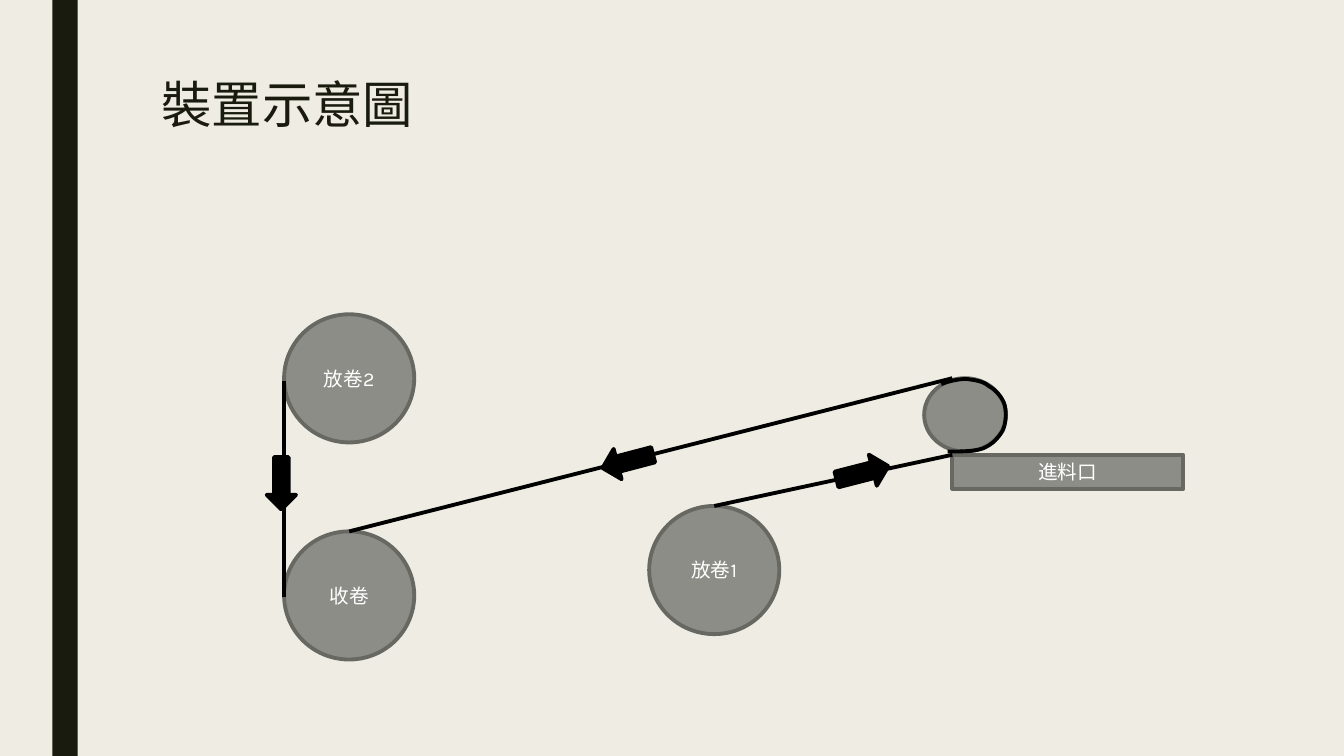
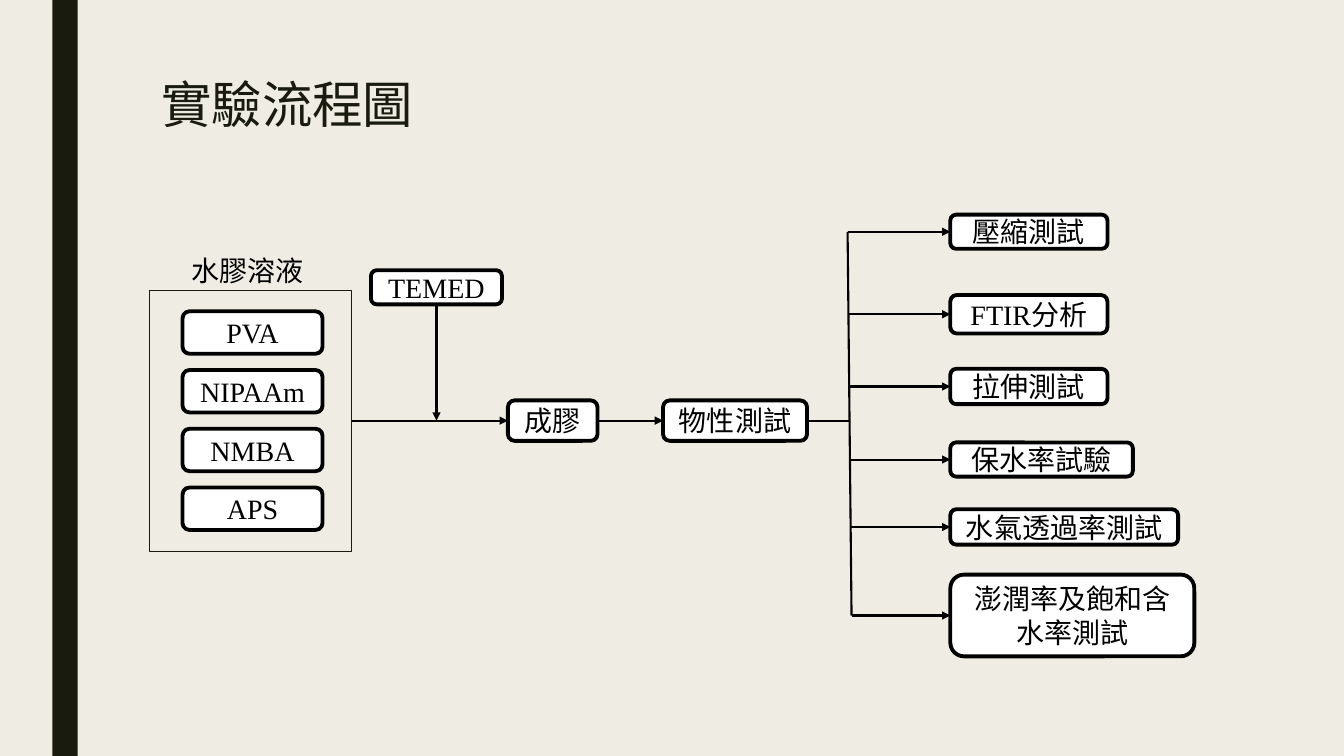
import lxml.etree
import pptx
import pptx.dml.color
import pptx.enum.shapes
import pptx.enum.text
import pptx.oxml.ns
import pptx.util

Cm = pptx.util.Cm
Pt = pptx.util.Pt
RGBColor = pptx.dml.color.RGBColor
PRESET = pptx.enum.shapes.MSO_SHAPE
ALIGN = pptx.enum.text.PP_ALIGN
ANCHOR = pptx.enum.text.MSO_ANCHOR
qn = pptx.oxml.ns.qn

CREAM = RGBColor(0xEF, 0xED, 0xE3)
DARK = RGBColor(0x19, 0x1B, 0x0E)
GREY = RGBColor(0x8C, 0x8D, 0x86)
GREY_EDGE = RGBColor(0x68, 0x68, 0x63)
BLACK = RGBColor(0, 0, 0)
WHITE = RGBColor(0xFF, 0xFF, 0xFF)

CJK = "Noto Sans CJK TC"
SERIF = "Times New Roman"
SANS = "Arial"
LABEL = "Karla"
HEAVY = 2.75
FINE = 1.5


class Deck:
    def __init__(self):
        self.prs = pptx.Presentation()
        self.prs.slide_width = Cm(33.87)
        self.prs.slide_height = Cm(19.05)
        self.layout = self.prs.slide_layouts[5]
        self.slide = None
        fill = self.prs.slide_master.background.fill
        fill.solid()
        fill.fore_color.rgb = CREAM
        heading = self.layout.placeholders[0]
        heading.left, heading.top = Cm(3.81), Cm(1.9)
        heading.width, heading.height = Cm(26.67), Cm(4.11)

    def new_slide(self, title, font):
        first = self.slide is None
        self.slide = self.prs.slides.add_slide(self.layout)
        if first:
            band = self.shape(PRESET.RECTANGLE, 1.32, 0, 0.64, 19.05, DARK)
            self.prs.slide_master.element.cSld.spTree.insert(2, band.element)
        heading = self.slide.shapes.title
        heading.text_frame.auto_size = pptx.enum.text.MSO_AUTO_SIZE.NONE
        self.add_text(heading, title, 36, font, DARK, ALIGN.LEFT, ANCHOR.TOP)
        heading.text_frame.paragraphs[0].line_spacing = 0.89

    def add_text(self, holder, text, size, font, color, align=ALIGN.CENTER, anchor=ANCHOR.MIDDLE):
        frame = holder.text_frame
        frame.word_wrap = True
        frame.vertical_anchor = anchor
        paragraph = frame.paragraphs[0]
        paragraph.alignment = align
        run = paragraph.add_run()
        run.text = text
        run.font.size = Pt(size)
        run.font.color.rgb = color
        run.font.name = font
        for properties in holder.element.iter(qn("a:rPr")):
            lxml.etree.SubElement(properties, qn("a:ea"), typeface=CJK)

    def paint(self, shape, fill, edge, weight):
        shape.shadow.inherit = False
        if fill is None:
            shape.fill.background()
        else:
            shape.fill.solid()
            shape.fill.fore_color.rgb = fill
        if edge is None:
            shape.line.fill.background()
        else:
            shape.line.color.rgb = edge
            shape.line.width = Pt(weight)

    def shape(self, preset, left, top, width, height, fill=None, edge=None, weight=HEAVY):
        shape = self.slide.shapes.add_shape(preset, Cm(left), Cm(top), Cm(width), Cm(height))
        self.paint(shape, fill, edge, weight)
        return shape

    def machine_part(self, preset, left, top, width, height, text=None):
        part = self.shape(preset, left, top, width, height, GREY, GREY_EDGE)
        if text:
            self.add_text(part, text, 14, LABEL, WHITE)

    def direction(self, left, top, width, height, angle):
        arrow = self.shape(PRESET.RIGHT_ARROW, left, top, width, height, BLACK, BLACK)
        arrow.rotation = angle

    def step(self, text, left, middle, width, height, font=CJK):
        step = self.shape(PRESET.ROUNDED_RECTANGLE, left, middle - height / 2, width, height, WHITE, BLACK)
        step.adjustments[0] = 0.167
        self.add_text(step, text, 20, font, BLACK)
        return step

    def caption(self, text, left, top, width, height):
        caption = self.slide.shapes.add_textbox(Cm(left), Cm(top), Cm(width), Cm(height))
        self.add_text(caption, text, 20, CJK, BLACK)

    def line(self, start, end, weight=FINE, arrow=False):
        link = self.slide.shapes.add_connector(pptx.enum.shapes.MSO_CONNECTOR.STRAIGHT, 0, 0, 0, 0)
        if hasattr(start[0], "shape_type"):
            link.begin_connect(*start)
        else:
            link.begin_x, link.begin_y = Cm(start[0]), Cm(start[1])
        if hasattr(end[0], "shape_type"):
            link.end_connect(*end)
        else:
            link.end_x, link.end_y = Cm(end[0]), Cm(end[1])
        link.line.color.rgb = BLACK
        link.line.width = Pt(weight)
        properties = link.element.spPr
        if arrow:
            lxml.etree.SubElement(properties.find(qn("a:ln")), qn("a:tailEnd"), type="triangle")
        lxml.etree.SubElement(properties, qn("a:effectLst"))

    def curve(self, start, bends, pieces=8):
        points = []
        origin = start
        for bend in bends:
            nodes = (origin, *bend)
            for piece in range(1, pieces + 1):
                t = piece / pieces
                weights = ((1 - t) ** 3, 3 * t * (1 - t) ** 2, 3 * t * t * (1 - t), t ** 3)
                points.append(tuple(Cm(sum(w * n[axis] for w, n in zip(weights, nodes))) for axis in (0, 1)))
            origin = bend[-1]
        builder = self.slide.shapes.build_freeform(Cm(start[0]), Cm(start[1]))
        builder.add_line_segments(points, close=False)
        self.paint(builder.convert_to_shape(), None, BLACK, HEAVY)


def device_slide(deck):
    deck.new_slide("裝置示意圖", SANS)
    for text, left, top in (("放卷1", 16.36, 12.75), ("收卷", 7.16, 13.39), ("放卷2", 7.16, 7.92)):
        deck.machine_part(PRESET.OVAL, left, top, 3.28, 3.23, text)
    deck.machine_part(PRESET.OVAL, 23.29, 9.53, 2.06, 1.85)
    deck.machine_part(PRESET.RECTANGLE, 24, 11.46, 5.82, 0.86, "進料口")
    deck.curve((23.88, 11.38), (
        ((24.21, 11.38), (24.54, 11.38), (24.77, 11.3)),
        ((25.02, 11.2), (25.17, 11.02), (25.27, 10.85)),
        ((25.35, 10.67), (25.37, 10.41), (25.32, 10.21)),
        ((25.27, 10.03), (25.1, 9.83), (24.92, 9.73)),
        ((24.77, 9.6), (24.56, 9.58), (24.36, 9.55)),
        ((24.16, 9.55), (23.93, 9.6), (23.72, 9.68)),
    ))
    deck.direction(15.16, 11.23, 1.32, 0.79, 165.3)
    deck.direction(6.43, 11.81, 1.32, 0.74, 90)
    deck.direction(21.06, 11.51, 1.35, 0.81, 345.6)
    for start, end in (
        ((7.16, 9.6), (7.16, 15.04)),
        ((24, 9.53), (8.8, 13.39)),
        ((18, 12.75), (24, 11.46)),
    ):
        deck.line(start, end, HEAVY)


def process_slide(deck):
    deck.new_slide("實驗流程圖", CJK)
    axis = 10.6
    solution = deck.shape(PRESET.RECTANGLE, 3.78, axis - 3.29, 5.08, 6.58, edge=DARK, weight=0.75)
    deck.caption("水膠溶液", 3.81, 6.17, 4.85, 1.27)
    for row, ingredient in enumerate(("PVA", "NIPAAm", "NMBA", "APS")):
        deck.step(ingredient, 4.6, 8.38 + 1.48 * row, 3.53, 1.07, SERIF)

    initiator = deck.step("TEMED", 9.35, 7.24, 3.3, 0.86, SERIF)
    gelling = deck.step("成膠", 12.8, axis, 2.26, 1.02)
    testing = deck.step("物性測試", 16.71, axis, 3.63, 1.02)
    deck.line((solution, 3), (gelling, 1), arrow=True)
    deck.line((initiator, 2), (11, axis), arrow=True)
    deck.line((gelling, 3), (testing, 1), arrow=True)

    bus_top, bus_bottom = (21.36, 5.84), (21.46, 15.51)

    def bus_point(y):
        share = (y - bus_top[1]) / (bus_bottom[1] - bus_top[1])
        return bus_top[0] + share * (bus_bottom[0] - bus_top[0]), y

    deck.line(bus_bottom, bus_top)
    deck.line((testing, 3), bus_point(axis))
    for text, middle, width, height, font in (
        ("壓縮測試", 5.84, 3.96, 0.86, CJK),
        ("FTIR分析", 7.92, 3.96, 0.97, SERIF),
        ("拉伸測試", 9.74, 3.96, 0.89, CJK),
        ("保水率試驗", 11.58, 4.6, 0.86, SERIF),
        ("水氣透過率測試", 13.28, 5.74, 0.89, SERIF),
        ("澎潤率及飽和含水率測試", 15.51, 6.15, 2.06, CJK),
    ):
        test = deck.step(text, 23.95, middle, width, height, font)
        deck.line(bus_point(middle), (test, 1), arrow=True)


def main():
    deck = Deck()
    device_slide(deck)
    process_slide(deck)
    deck.prs.save("out.pptx")


if __name__ == "__main__":
    main()
